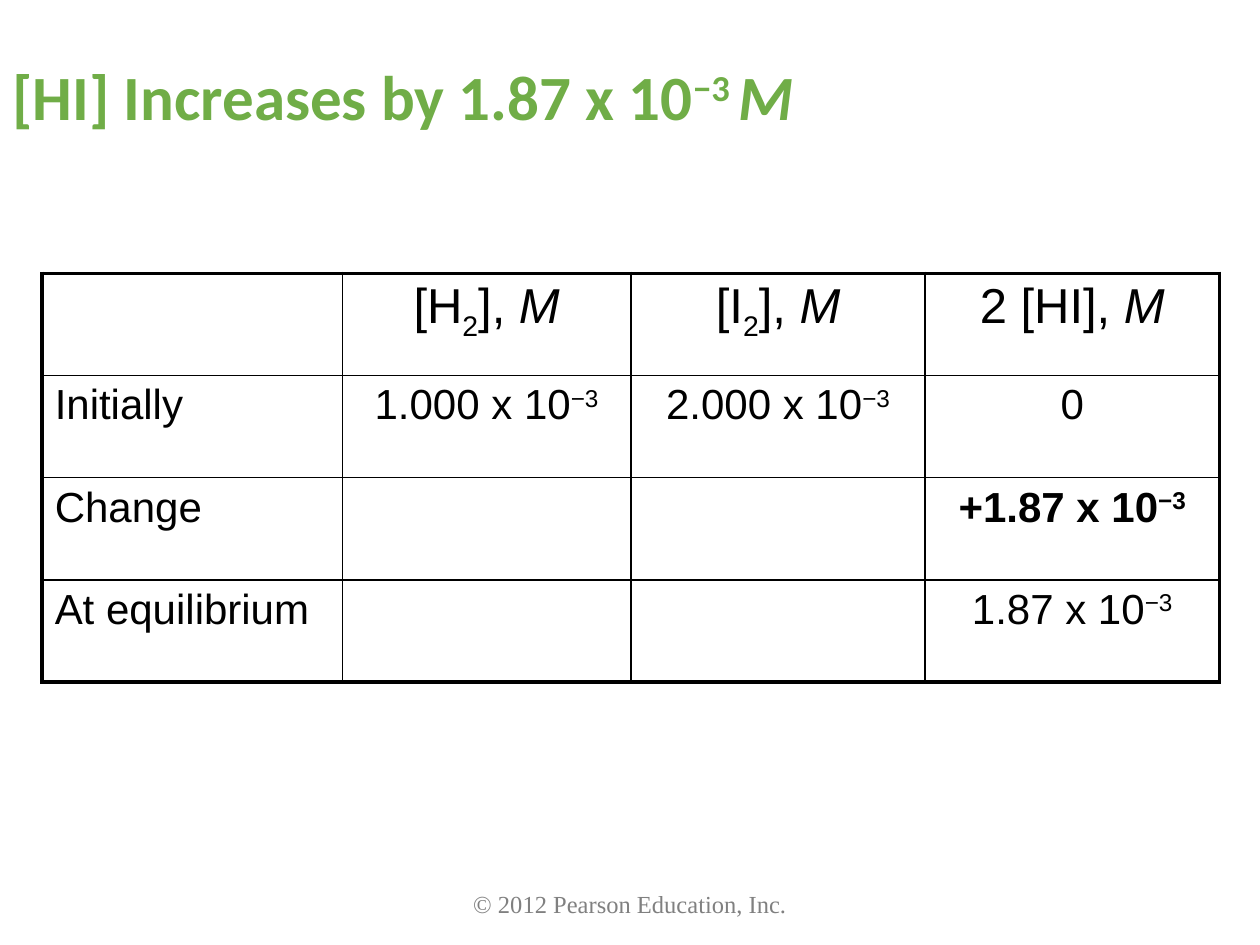
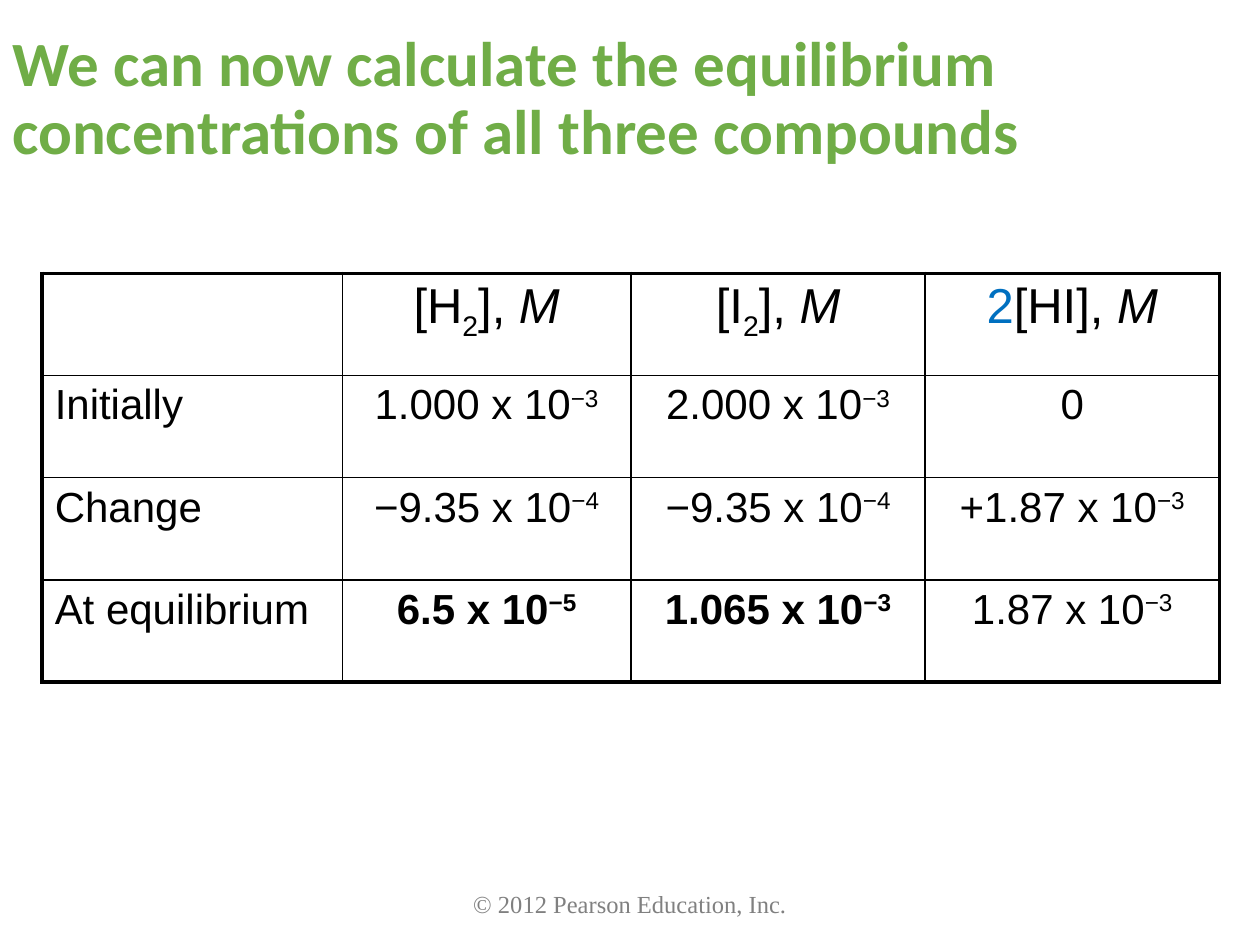
from dataclasses import dataclass

import pptx
import pptx.dml.color
import pptx.enum.text
import pptx.oxml
import pptx.oxml.ns
import pptx.util

Cm = pptx.util.Cm
Pt = pptx.util.Pt
Align = pptx.enum.text.PP_ALIGN
Anchor = pptx.enum.text.MSO_ANCHOR


@dataclass(frozen=True)
class Theme:
    title_color: str = "70AD47"
    text_color: str = "000000"
    accent_color: str = "0070C0"
    footer_color: str = "808080"
    title_font: str = "Calibri"
    table_font: str = "Arial"
    footer_font: str = "Times New Roman"
    title_size: int = 36
    header_size: int = 28
    body_size: int = 24
    footer_size: int = 14
    outer_line: float = 2.25
    inner_line: float = 1


@dataclass(frozen=True)
class Piece:
    text: str
    baseline: int = 0
    italic: bool = False
    color: str = ""


@dataclass(frozen=True)
class Entry:
    pieces: tuple = ()
    bold: bool = False


THEME = Theme()
COLUMN_WIDTHS = (6.05, 5.82, 5.93, 5.93)
ROW_HEIGHT = 2.06
MOLAR = Piece("M", italic=True)
EMPTY = Entry()


def plain(text):
    return Entry((Piece(text),))


def power(value, exponent, bold=False):
    return Entry((Piece(f"{value} x 10"), Piece(f"−{exponent}", 30)), bold)


def diatomic(symbol):
    return Entry((Piece(f"[{symbol}"), Piece("2", -25), Piece("], "), MOLAR))


def rgb(color):
    return pptx.dml.color.RGBColor.from_string(color)


def write(paragraph, pieces, font, size, color, bold=False, align=Align.LEFT):
    paragraph.alignment = align
    paragraph.font.name = font
    paragraph.font.size = Pt(size)
    paragraph.font.bold = bold
    paragraph.font.color.rgb = rgb(color)
    for piece in pieces:
        run = paragraph.add_run()
        run.text = piece.text
        if piece.italic:
            run.font.italic = True
        if piece.color:
            run.font.color.rgb = rgb(piece.color)
        if piece.baseline:
            run._r.get_or_add_rPr().set("baseline", str(piece.baseline * 1000))


def add_text_box(slide, left, top, width, height, anchor):
    box = slide.shapes.add_textbox(Cm(left), Cm(top), Cm(width), Cm(height))
    box.text_frame.word_wrap = True
    box.text_frame.vertical_anchor = anchor
    return box.text_frame.paragraphs[0]


def add_title(slide, pieces):
    paragraph = add_text_box(slide, 0, 0.43, 25.4, 3.18, Anchor.MIDDLE)
    paragraph.line_spacing = 0.9
    write(paragraph, pieces, THEME.title_font, THEME.title_size,
          THEME.title_color, bold=True)


def add_footer(slide):
    paragraph = add_text_box(slide, 6.14, 17.36, 13.12, 1.27, Anchor.BOTTOM)
    write(paragraph, [Piece("© 2012 Pearson Education, Inc.")],
          THEME.footer_font, THEME.footer_size, THEME.footer_color,
          align=Align.CENTER)


def set_borders(cell, outer_sides):
    properties = cell._tc.get_or_add_tcPr()
    for side, is_outer in outer_sides.items():
        width = Pt(THEME.outer_line if is_outer else THEME.inner_line)
        properties.append(pptx.oxml.parse_xml(
            f'<a:ln{side} {pptx.oxml.ns.nsdecls("a")} w="{width}">'
            f'<a:solidFill><a:srgbClr val="{THEME.text_color}"/></a:solidFill>'
            f'</a:ln{side}>'))


def add_concentration_table(slide, rows):
    row_count, column_count = len(rows), len(COLUMN_WIDTHS)
    table = slide.shapes.add_table(
        row_count, column_count, Cm(0.85), Cm(5.51),
        Cm(sum(COLUMN_WIDTHS)), Cm(ROW_HEIGHT * row_count)).table
    table.first_row = False
    table.horz_banding = False
    for column, width in zip(table.columns, COLUMN_WIDTHS):
        column.width = Cm(width)
    for row_index, entries in enumerate(rows):
        table.rows[row_index].height = Cm(ROW_HEIGHT)
        for column_index, entry in enumerate(entries):
            cell = table.cell(row_index, column_index)
            set_borders(cell, {
                "L": column_index == 0,
                "R": column_index == column_count - 1,
                "T": row_index == 0,
                "B": row_index == row_count - 1,
            })
            cell.fill.background()
            write(cell.text_frame.paragraphs[0], entry.pieces, THEME.table_font,
                  THEME.body_size if row_index else THEME.header_size,
                  THEME.text_color, entry.bold,
                  Align.CENTER if column_index else Align.LEFT)


def add_equilibrium_slide(presentation, title, product, changes, equilibrium):
    slide = presentation.slides.add_slide(presentation.slide_layouts[6])
    add_title(slide, title)
    add_concentration_table(slide, [
        [EMPTY, diatomic("H"), diatomic("I"), Entry(product)],
        [plain("Initially"), power("1.000", 3), power("2.000", 3), plain("0")],
        [plain("Change"), *changes],
        [plain("At equilibrium"), *equilibrium, power("1.87", 3)],
    ])
    add_footer(slide)


def main():
    presentation = pptx.Presentation()
    presentation.slide_width = Cm(25.4)
    presentation.slide_height = Cm(19.05)
    add_equilibrium_slide(
        presentation,
        title=(Piece("[HI] Increases by 1.87 x 10"), Piece("−3 ", 30), MOLAR),
        product=(Piece("2 [HI], "), MOLAR),
        changes=(EMPTY, EMPTY, power("+1.87", 3, bold=True)),
        equilibrium=(EMPTY, EMPTY))
    add_equilibrium_slide(
        presentation,
        title=(Piece("We can now calculate the equilibrium "
                     "concentrations of all three compounds"),),
        product=(Piece("2", color=THEME.accent_color), Piece("[HI], "), MOLAR),
        changes=(power("−9.35", 4), power("−9.35", 4), power("+1.87", 3)),
        equilibrium=(power("6.5", 5, bold=True), power("1.065", 3, bold=True)))
    presentation.save("out.pptx")


if __name__ == "__main__":
    main()
